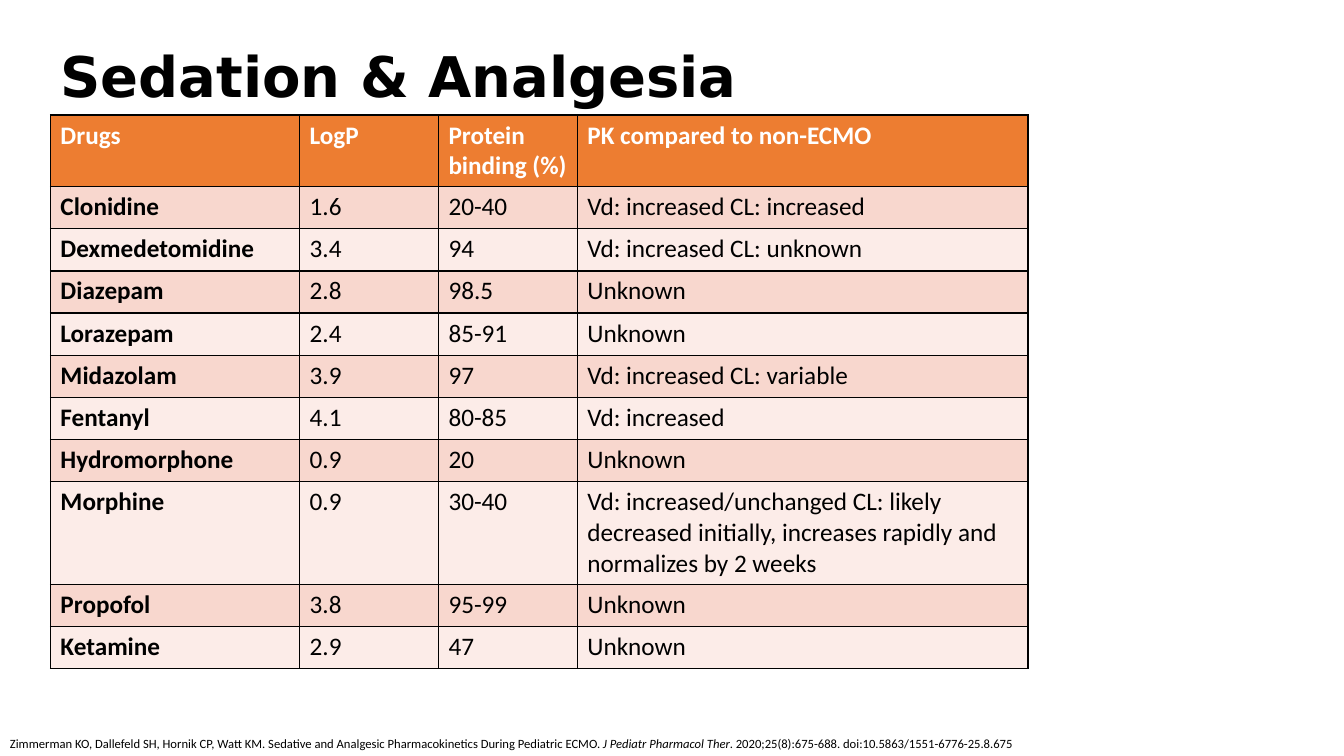
from lxml import etree
from pptx import Presentation
from pptx.dml.color import RGBColor
from pptx.enum.text import MSO_ANCHOR, PP_ALIGN
from pptx.oxml.ns import qn
from pptx.util import Pt

LEFT = PP_ALIGN.LEFT
MIDDLE = MSO_ANCHOR.MIDDLE
TITLE_ONLY = 5

COLORS = {
    "text": "000000",
    "header_text": "FFFFFF",
    "header": "ED7D31",
    "band_dark": "F8D7CE",
    "band_light": "FCECE8",
    "border": "000000",
}
BODY_FONT = "Calibri"
TITLE_FONT = "DejaVu Sans"

COLUMN_WIDTHS = [178, 99.2, 99.2, 322]
ROW_HEIGHT, HEADER_HEIGHT, MORPHINE_HEIGHT = 30.1, 50.4, 73.4
HEADER = ["Drugs", "LogP", "Protein binding (%)", "PK compared to non-ECMO"]
DRUGS = [
    ["Clonidine", "1.6", "20-40", "Vd: increased CL: increased"],
    ["Dexmedetomidine", "3.4", "94", "Vd: increased CL: unknown"],
    ["Diazepam", "2.8", "98.5", "Unknown"],
    ["Lorazepam", "2.4", "85-91", "Unknown"],
    ["Midazolam", "3.9", "97", "Vd: increased CL: variable"],
    ["Fentanyl", "4.1", "80-85", "Vd: increased"],
    ["Hydromorphone", "0.9", "20", "Unknown"],
    ["Morphine", "0.9", "30-40",
     "Vd: increased/unchanged CL: likely decreased initially, "
     "increases rapidly and normalizes by 2 weeks"],
    ["Propofol", "3.8", "95-99", "Unknown"],
    ["Ketamine", "2.9", "47", "Unknown"],
]
CITATION = [
    ("Zimmerman KO, Dallefeld SH, Hornik CP, Watt KM. Sedative and Analgesic "
     "Pharmacokinetics During Pediatric ECMO. ", False),
    ("J Pediatr Pharmacol Ther", True),
    (". 2020;25(8):675-688. doi:10.5863/1551-6776-25.8.675", False),
]


def add_run(p, text, size, font=BODY_FONT, color="text", bold=False, italic=False):
    r = p.add_run()
    r.text = text
    r.font.size = Pt(size)
    r.font.name = font
    r.font.bold = bold
    r.font.italic = italic
    r.font.color.rgb = RGBColor.from_string(COLORS[color])


def add_title(slide, text):
    title = slide.shapes.title
    title.left, title.top, title.width, title.height = Pt(36), Pt(31), Pt(536.4), Pt(51)
    tf = title.text_frame
    tf.word_wrap = True
    tf.vertical_anchor = MIDDLE
    p = tf.paragraphs[0]
    p.alignment = LEFT
    p.line_spacing = 0.9
    add_run(p, text, 40, TITLE_FONT, bold=True)


def set_borders(cell):
    """Draw a 1 pt line on all four sides; call before setting the fill."""
    tc_pr = cell._tc.get_or_add_tcPr()
    for side in ("a:lnL", "a:lnR", "a:lnT", "a:lnB"):
        line = etree.SubElement(tc_pr, qn(side), w=str(Pt(1)))
        fill = etree.SubElement(line, qn("a:solidFill"))
        etree.SubElement(fill, qn("a:srgbClr"), val=COLORS["border"])


def fill_cell(cell, text, fill, color, bold):
    set_borders(cell)
    cell.fill.solid()
    cell.fill.fore_color.rgb = RGBColor.from_string(COLORS[fill])
    add_run(cell.text_frame.paragraphs[0], text, 18, color=color, bold=bold)


def add_drug_table(slide):
    rows = [HEADER] + DRUGS
    heights = [MORPHINE_HEIGHT if row[0] == "Morphine" else ROW_HEIGHT for row in rows]
    heights[0] = HEADER_HEIGHT
    table = slide.shapes.add_table(
        len(rows), len(HEADER), Pt(36), Pt(82.2),
        Pt(sum(COLUMN_WIDTHS)), Pt(sum(heights))).table
    for column, width in zip(table.columns, COLUMN_WIDTHS):
        column.width = Pt(width)
    for i, (row, height) in enumerate(zip(rows, heights)):
        table.rows[i].height = Pt(height)
        is_header = i == 0
        band = "band_dark" if i % 2 else "band_light"
        for j, text in enumerate(row):
            fill_cell(table.cell(i, j), text,
                      fill="header" if is_header else band,
                      color="header_text" if is_header else "text",
                      bold=is_header or j == 0)


def add_citation(slide):
    tf = slide.shapes.add_textbox(Pt(0), Pt(522), Pt(764.6), Pt(18)).text_frame
    tf.word_wrap = True
    for text, italic in CITATION:
        add_run(tf.paragraphs[0], text, 9, italic=italic)


def main():
    prs = Presentation()
    prs.slide_width, prs.slide_height = Pt(960), Pt(540)
    slide = prs.slides.add_slide(prs.slide_layouts[TITLE_ONLY])
    add_title(slide, "Sedation & Analgesia")
    add_drug_table(slide)
    add_citation(slide)
    prs.save("out.pptx")


if __name__ == "__main__":
    main()
